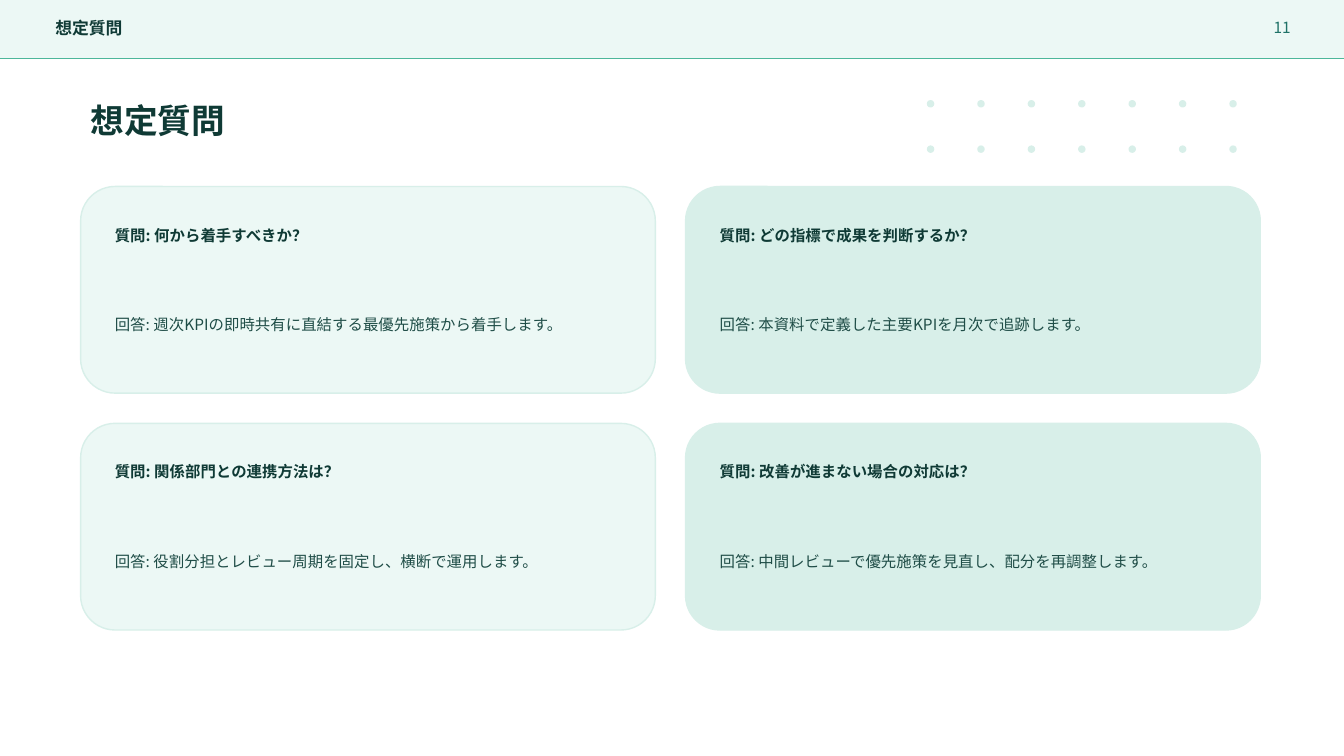
"""Build the expected questions slide."""
import lxml.etree
import pptx
import pptx.dml.color
import pptx.enum.shapes
import pptx.enum.text
import pptx.oxml.ns
import pptx.util

Inches = pptx.util.Inches
Shape = pptx.enum.shapes.MSO_SHAPE
Align = pptx.enum.text.PP_ALIGN
qn = pptx.oxml.ns.qn

WIDE, HIGH = 13.33, 7.5
SANS = "Noto Sans CJK JP"
TITLE = "想定質問"
HUES = {
    "pale": "ECF8F5",
    "mint": "D8EFE9",
    "rule": "4DB79A",
    "dark": "0F3A35",
    "body": "1F4D47",
    "page": "1F7267",
}
CARDS = [
    ("何から着手すべきか？", "週次KPIの即時共有に直結する最優先施策から着手します。"),
    ("どの指標で成果を判断するか？", "本資料で定義した主要KPIを月次で追跡します。"),
    ("関係部門との連携方法は？", "役割分担とレビュー周期を固定し、横断で運用します。"),
    ("改善が進まない場合の対応は？", "中間レビューで優先施策を見直し、配分を再調整します。"),
]


def hue(name):
    """Return the named colour."""
    return pptx.dml.color.RGBColor.from_string(HUES[name])


def shape(slide, kind, box, fill, line):
    """Add a filled and outlined preset shape."""
    item = slide.shapes.add_shape(kind, *map(Inches, box))
    item.shadow.inherit = False
    item.fill.solid()
    item.fill.fore_color.rgb = hue(fill)
    item.line.color.rgb = hue(line)
    item.line.width = pptx.util.Pt(1)


def label(slide, box, text, size, color, bold=False, face=SANS, align=Align.LEFT):
    """Add a vertically centred line of text."""
    frame = slide.shapes.add_textbox(*map(Inches, box)).text_frame
    frame.word_wrap = True
    frame.vertical_anchor = pptx.enum.text.MSO_ANCHOR.MIDDLE
    frame.text = text
    para = frame.paragraphs[0]
    para.alignment = align
    run = para.runs[0]
    run.font.size = pptx.util.Pt(size)
    run.font.bold = bold
    run.font.color.rgb = hue(color)
    run.font.name = face
    east = lxml.etree.SubElement(run.font._element, qn("a:ea"))
    east.set("typeface", face)


def dots(slide, left, top, cols, rows):
    """Draw the grid of small dots."""
    for row in range(rows):
        for col in range(cols):
            box = (left + col * 0.5, top + row * 0.45, 0.06, 0.06)
            shape(slide, Shape.OVAL, box, "mint", "mint")


def header(slide, left, top, width, height):
    """Draw the top band with its rule, title and page number."""
    shape(slide, Shape.RECTANGLE, (left, top, width, height), "pale", "pale")
    ends = (left, top + height, left + width, top + height)
    rule = slide.shapes.add_connector(
        pptx.enum.shapes.MSO_CONNECTOR.STRAIGHT, *map(Inches, ends))
    rule.line.color.rgb = hue("rule")
    rule.line.width = pptx.util.Pt(1)
    lxml.etree.SubElement(rule._element.spPr, qn("a:effectLst"))
    label(slide, (left + 0.45, top + 0.15, 9.3, 0.26), TITLE, 12, "dark", True)
    label(slide, (left + width - 1.13, top + 0.14, 0.7, 0.26), "11", 11, "page",
          align=Align.RIGHT)


def card(slide, left, top, width, height, fill, ask, reply):
    """Draw one card with a question and its answer."""
    shape(slide, Shape.ROUNDED_RECTANGLE, (left, top, width, height), fill, "mint")
    inner = width - 0.5
    label(slide, (left + 0.24, top + 0.24, inner, 0.48), "質問: " + ask, 11, "dark", True)
    label(slide, (left + 0.24, top + 0.82, inner, 1.1), "回答: " + reply, 11, "body")


def cards(slide, left, top, width, height):
    """Lay the cards out in two columns."""
    gap = 0.3
    wide, high = (width - gap) / 2, (height - gap) / 2
    for index, (ask, reply) in enumerate(CARDS):
        row, col = divmod(index, 2)
        card(slide, left + col * (wide + gap), top + row * (high + gap),
             wide, high, ("pale", "mint")[col], ask, reply)


def main():
    """Build and save the slide."""
    deck = pptx.Presentation()
    deck.slide_width, deck.slide_height = Inches(WIDE), Inches(HIGH)
    slide = deck.slides.add_slide(deck.slide_layouts[6])
    dots(slide, 9.2, 1, 7, 2)
    header(slide, 0, 0, WIDE, 0.58)
    label(slide, (0.8, 0.95, 11.4, 0.48), TITLE, 24, "dark", True, "Cabin")
    cards(slide, 0.8, 1.85, 11.7, 4.4)
    deck.save("out.pptx")


if __name__ == "__main__":
    main()
